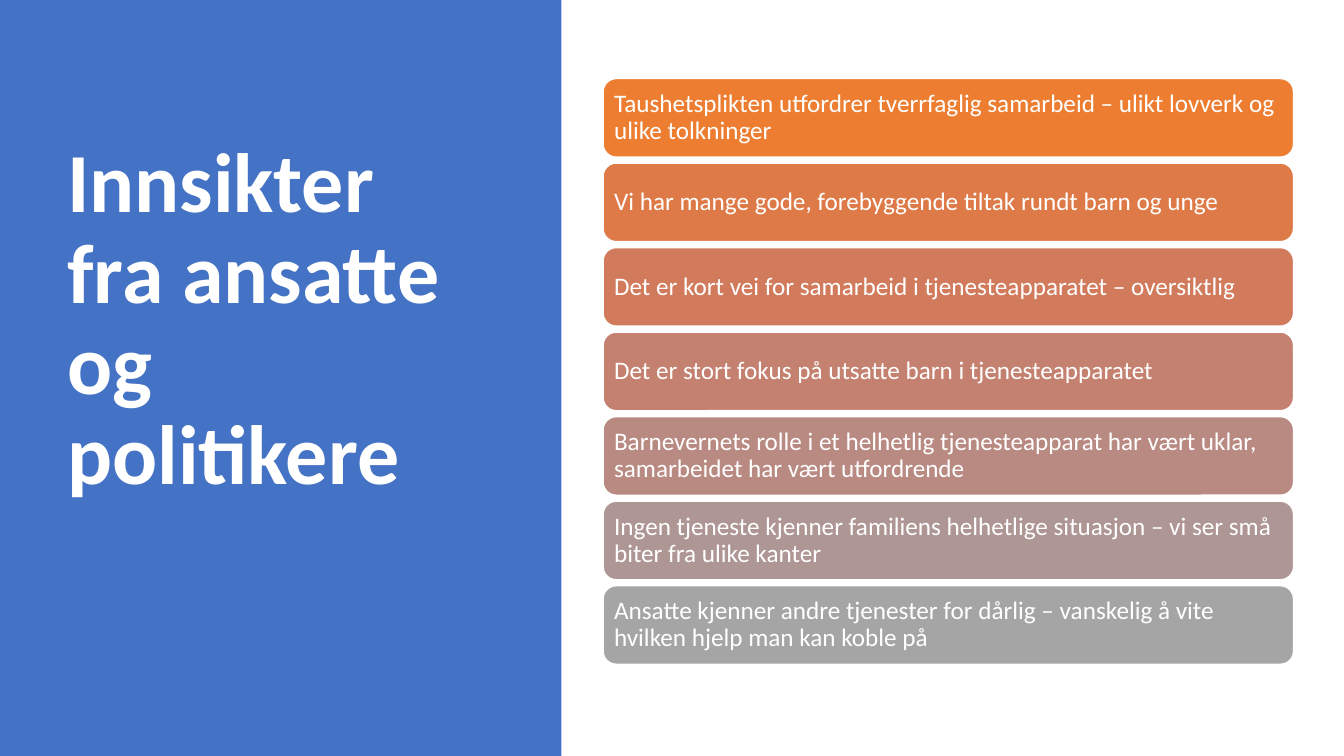
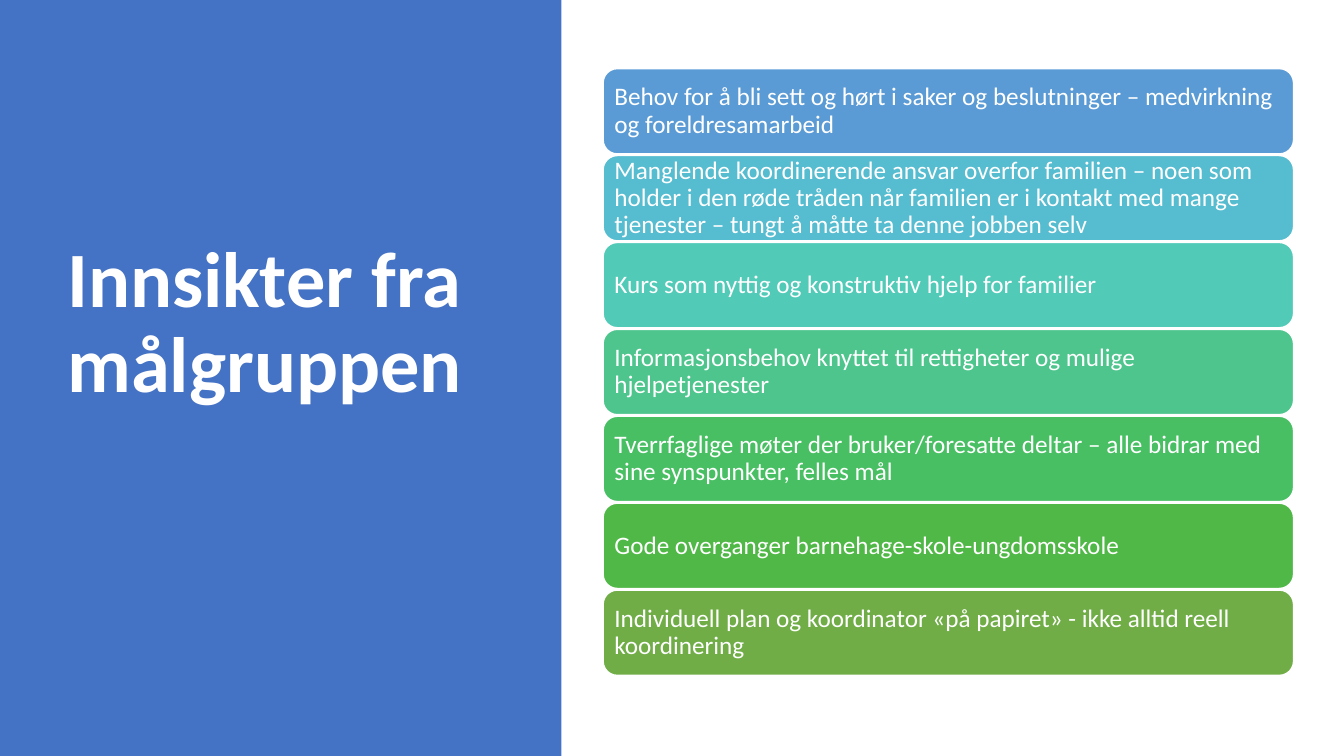
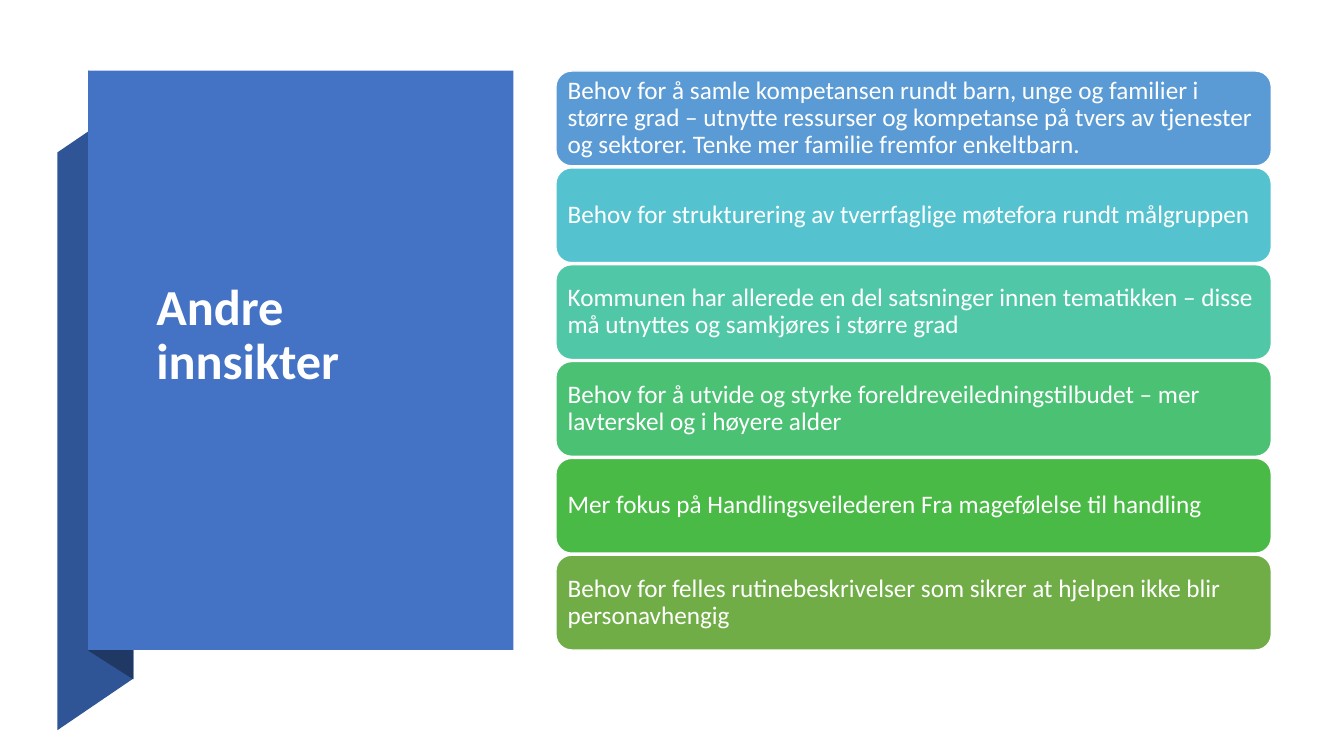
from pptx import Presentation
from pptx.dml.color import RGBColor
from pptx.enum import shapes as kinds, text as txt
from pptx.util import Cm, Pt

FONT = "Calibri"
COLORS = {
    "white": "FFFFFF",
    "blue": "4472C4",
    "mid": "2F5597",
    "dark": "203864",
}
# Bar colours from top to bottom
RAMPS = {
    "warm": ["ED7D31", "DE7A47", "D17B5C", "C48170", "B98A82", "AE9694", "A5A5A5"],
    "cool": ["5B9BD5", "56BCD0", "52CAB8", "4DC58D", "49BF64", "50B846", "70AD47"],
    "fresh": ["5B9BD5", "55C3CF", "50C8A7", "4BC174", "4ABA46", "70AD47"],
}

STAFF = [
    "Taushetsplikten utfordrer tverrfaglig samarbeid – ulikt lovverk og ulike tolkninger",
    "Vi har mange gode, forebyggende tiltak rundt barn og unge",
    "Det er kort vei for samarbeid i tjenesteapparatet – oversiktlig",
    "Det er stort fokus på utsatte barn i tjenesteapparatet",
    "Barnevernets rolle i et helhetlig tjenesteapparat har vært uklar, "
    "samarbeidet har vært utfordrende",
    "Ingen tjeneste kjenner familiens helhetlige situasjon – vi ser små biter fra ulike kanter",
    "Ansatte kjenner andre tjenester for dårlig – vanskelig å vite "
    "hvilken hjelp man kan koble på",
]
TARGET = [
    "Behov for å bli sett og hørt i saker og beslutninger – medvirkning og foreldresamarbeid",
    "Manglende koordinerende ansvar overfor familien – noen som holder i den røde tråden "
    "når familien er i kontakt med mange tjenester – tungt å måtte ta denne jobben selv",
    "Kurs som nyttig og konstruktiv hjelp for familier",
    "Informasjonsbehov knyttet til rettigheter og mulige hjelpetjenester",
    "Tverrfaglige møter der bruker/foresatte deltar – alle bidrar med sine synspunkter, "
    "felles mål",
    "Gode overganger barnehage-skole-ungdomsskole",
    "Individuell plan og koordinator «på papiret» - ikke alltid reell koordinering",
]
OTHER = [
    "Behov for å samle kompetansen rundt barn, unge og familier i større grad – utnytte "
    "ressurser og kompetanse på tvers av tjenester og sektorer. "
    "Tenke mer familie fremfor enkeltbarn.",
    "Behov for strukturering av tverrfaglige møtefora rundt målgruppen",
    "Kommunen har allerede en del satsninger innen tematikken – disse må utnyttes "
    "og samkjøres i større grad",
    "Behov for å utvide og styrke foreldreveiledningstilbudet – mer lavterskel "
    "og i høyere alder",
    "Mer fokus på Handlingsveilederen Fra magefølelse til handling",
    "Behov for felles rutinebeskrivelser som sikrer at hjelpen ikke blir personavhengig",
]


def paint(shape, fill, line=None):
    shape.shadow.inherit = False
    shape.fill.solid()
    shape.fill.fore_color.rgb = RGBColor.from_string(fill)
    if line:
        shape.line.color.rgb = RGBColor.from_string(line)
        shape.line.width = Pt(1)
    else:
        shape.line.fill.background()


def write(shape, words, size, bold=False):
    frame = shape.text_frame
    frame.word_wrap = True
    frame.vertical_anchor = txt.MSO_ANCHOR.MIDDLE
    frame.text = words
    para = frame.paragraphs[0]
    para.alignment = txt.PP_ALIGN.LEFT
    para.line_spacing = 0.9
    font = para.runs[0].font
    font.name, font.size, font.bold = FONT, Pt(size), bold
    font.color.rgb = RGBColor.from_string(COLORS["white"])


def add_panel(slide, box):
    rect = slide.shapes.add_shape(kinds.MSO_SHAPE.RECTANGLE, *map(Cm, box))
    paint(rect, COLORS["blue"])


def add_title(slide, words, size, box):
    title = slide.shapes.add_textbox(*map(Cm, box))
    write(title, words, size, bold=True)
    # Lift the title by keeping one line free below it
    title.text_frame.margin_bottom = Pt(size * 1.2) + Cm(0.13)


def add_fold(slide, points, fill):
    spots = [(Cm(x), Cm(y)) for x, y in points]
    pen = slide.shapes.build_freeform(*spots[0])
    pen.add_line_segments(spots[1:], close=True)
    paint(pen.convert_to_shape(), fill)


def add_bars(slide, items, ramp, left, top, width, height, pitch):
    for i, (words, fill) in enumerate(zip(items, RAMPS[ramp])):
        bar = slide.shapes.add_shape(
            kinds.MSO_SHAPE.ROUNDED_RECTANGLE,
            Cm(left), Cm(top + i * pitch), Cm(width), Cm(height))
        paint(bar, fill, COLORS["white"])
        write(bar, words, 18)
        frame = bar.text_frame
        frame.margin_left = frame.margin_right = Cm(0.18)
        frame.margin_top = frame.margin_bottom = 0


def add_split(slide, words, size):
    """Full-height panel on the left with a large title."""
    add_panel(slide, (0, 0, 14.15, 19.05))
    add_title(slide, words, size, (1.45, 1.73, 10.57, 15.29))


def main():
    deck = Presentation()
    deck.slide_width, deck.slide_height = Cm(33.87), Cm(19.05)
    staff, target, other = [
        deck.slides.add_slide(deck.slide_layouts[6]) for _ in range(3)]

    # Staff and politicians
    add_split(staff, "Innsikter fra ansatte og politikere", 60)
    add_bars(staff, STAFF, "warm", 15.2, 1.98, 17.4, 1.98, 2.13)

    # Target group
    add_split(target, "Innsikter fra målgruppen", 56)
    add_bars(target, TARGET, "cool", 15.2, 1.73, 17.4, 2.15, 2.19)

    # Other insights, on a folded ribbon
    add_fold(other, [(1.45, 18.4), (3.36, 17.1), (3.36, 2.54), (1.45, 3.84)],
             COLORS["mid"])
    add_fold(other, [(2.23, 16.4), (3.36, 17.12), (3.36, 2.51), (2.23, 1.78)],
             COLORS["dark"])
    add_panel(other, (2.22, 1.78, 10.72, 14.6))
    add_title(other, "Andre innsikter", 36, (3.69, 4.24, 7.65, 10))
    add_bars(other, OTHER, "fresh", 14.01, 1.79, 18.03, 2.39, 2.44)

    deck.save("out.pptx")


if __name__ == "__main__":
    main()
